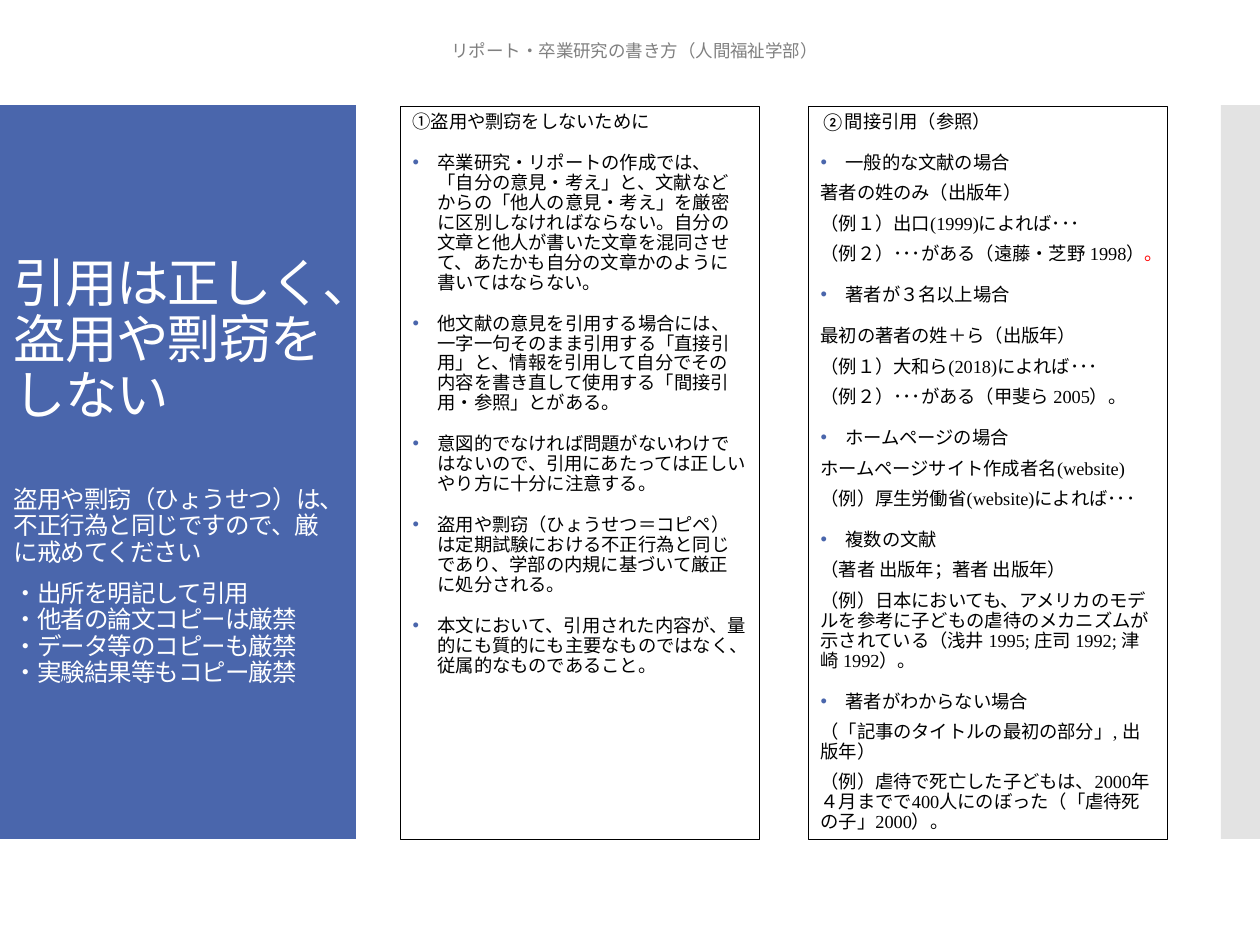
import pptx
import pptx.util
import pptx.dml.color
import pptx.enum.text
import pptx.enum.shapes
import pptx.oxml.ns
from lxml import etree

Pt = pptx.util.Pt
qn = pptx.oxml.ns.qn
Enum = pptx.enum.text

TITLE = [
    ("top", "引用は正しく、盗用や剽窃をしない"),
    ("lead", "盗用や剽窃（ひょうせつ）は、不正行為と同じですので、厳に戒めてください"),
    ("first", "・出所を明記して引用"),
    ("rest", "・他者の論文コピーは厳禁"),
    ("rest", "・データ等のコピーも厳禁"),
    ("rest", "・実験結果等もコピー厳禁"),
]
LEFT = [
    ("head", "①盗用や剽窃をしないために"),
    ("dot", "卒業研究・リポートの作成では、「自分の意見・考え」と、文献などからの「他人の意見・考え」を厳密に区別しなければならない。自分の文章と他人が書いた文章を混同させて、あたかも自分の文章かのように書いてはならない。"),
    ("dot", "他文献の意見を引用する場合には、一字一句そのまま引用する「直接引用」と、情報を引用して自分でその内容を書き直して使用する「間接引用・参照」とがある。"),
    ("dot", "意図的でなければ問題がないわけではないので、引用にあたっては正しいやり方に十分に注意する。"),
    ("dot", "盗用や剽窃（ひょうせつ＝コピペ）は定期試験における不正行為と同じであり、学部の内規に基づいて厳正に処分される。"),
    ("dot", "本文において、引用された内容が、量的にも質的にも主要なものではなく、従属的なものであること。"),
]
RIGHT = [
    ("head", "②間接引用（参照）"),
    ("dot", "一般的な文献の場合"),
    ("note", "著者の姓のみ（出版年）"),
    ("note", "（例１）出口(1999)によれば･･･"),
    ("deep", "（例２）･･･がある（遠藤・芝野 1998）", "。"),
    ("dot", "著者が３名以上場合"),
    ("head", "最初の著者の姓＋ら（出版年）"),
    ("note", "（例１）大和ら(2018)によれば･･･"),
    ("deep", "（例２）･･･がある（甲斐ら 2005）。"),
    ("dot", "ホームページの場合"),
    ("note", "ホームページサイト作成者名(website)"),
    ("mid", "（例）厚生労働省(website)によれば･･･"),
    ("dot", "複数の文献"),
    ("note", "（著者 出版年；著者 出版年）"),
    ("note", "（例）日本においても、アメリカのモデルを参考に子どもの虐待のメカニズムが示されている（浅井 1995; 庄司 1992; 津崎 1992）。"),
    ("dot", "著者がわからない場合"),
    ("note", "（「記事のタイトルの最初の部分」, 出版年）"),
    ("note", "（例）虐待で死亡した子どもは、2000年４月までで400人にのぼった（「虐待死の子」2000）。"),
]
HEADER = [("strap", "リポート・卒業研究の書き方（人間福祉学部）")]

THEME = {
    "blue": "4A66AC", "gray": "C8C8C8", "ink": "000000",
    "white": "FFFFFF", "dim": "808080", "red": "FF0000",
    "sans": ("Calibri", "Calibri"),
    "gothic": ("Noto Sans CJK JP", "Noto Sans CJK JP"),
    "serif": ("Times New Roman", "Calibri"),
}
BIG = {"size": 30, "lead": 32, "color": "white", "track": -60}
SMALL = {**BIG, "size": 14, "lead": 15.1}
BODY = {"size": 10.5, "lead": 11.4, "color": "ink", "before": 12}
STYLE = {
    "top": BIG,
    "lead": {**SMALL, "before": 35},
    "first": {**SMALL, "before": 8.5},
    "rest": SMALL,
    "head": BODY,
    "dot": {**BODY, "hang": 25, "bullet": True},
    "note": {**BODY, "before": 6},
    "mid": {**BODY, "before": 6, "hang": 49},
    "deep": {**BODY, "before": 6, "hang": 74},
    "strap": {"size": 10, "lead": 14, "color": "dim", "align": Enum.PP_ALIGN.CENTER},
}
SCALE = 914400 / 126


def px(n):
    return round(n * SCALE)


def rgb(name):
    return pptx.dml.color.RGBColor.from_string(THEME[name])


def sub(node, tag, **attrs):
    return etree.SubElement(node, qn(tag), attrs)


def put(obj, vals):
    for key, val in vals.items():
        setattr(obj, key, val)


def place(shape, box):
    put(shape, dict(zip(("left", "top", "width", "height"), map(px, box))))


def write(shape, rows, face, anchor):
    frame = shape.text_frame
    put(frame, {"word_wrap": True, "auto_size": Enum.MSO_AUTO_SIZE.NONE,
                "vertical_anchor": anchor})
    latin, asian = THEME[face]
    for i, (kind, *parts) in enumerate(rows):
        st = STYLE[kind]
        para = frame.paragraphs[0] if i == 0 else frame.add_paragraph()
        put(para, {"alignment": st.get("align", Enum.PP_ALIGN.LEFT),
                   "line_spacing": Pt(st["lead"]),
                   "space_before": Pt(st.get("before", 0)),
                   "space_after": Pt(0)})
        props = para._p.get_or_add_pPr()
        hang = px(st.get("hang", 0))
        props.set("marL", str(hang))
        props.set("indent", str(-hang))
        if st.get("bullet"):
            sub(sub(props, "a:buClr"), "a:srgbClr", val=THEME["blue"])
            sub(props, "a:buFont", typeface="Arial")
            sub(props, "a:buChar", char="•")
        else:
            sub(props, "a:buNone")
        for text, color in zip(parts, (st["color"], "red")):
            run = para.add_run()
            run.text = text
            put(run.font, {"size": Pt(st["size"]), "name": latin, "bold": False})
            run.font.color.rgb = rgb(color)
            mark = run._r.get_or_add_rPr()
            sub(mark, "a:ea", typeface=asian)
            if "track" in st:
                mark.set("spc", str(st["track"]))


def band(slide, box, color, order, alpha=None):
    kind = pptx.enum.shapes.MSO_SHAPE.RECTANGLE
    shape = slide.shapes.add_shape(kind, *map(px, box))
    shape.shadow.inherit = False
    shape.fill.solid()
    shape.fill.fore_color.rgb = rgb(color)
    shape.line.fill.background()
    if alpha:
        tint = shape._element.spPr.find(".//" + qn("a:srgbClr"))
        sub(tint, "a:alpha", val=str(alpha * 1000))
    slide.shapes._spTree.insert(2 + order, shape._element)


def main():
    deck = pptx.Presentation()
    put(deck, {"slide_width": px(1260), "slide_height": px(945)})
    slide = deck.slides.add_slide(deck.slide_layouts[3])
    title, *cols = slide.placeholders

    band(slide, (0, 105, 356, 734), "blue", 0)
    band(slide, (1221, 105, 39, 734), "gray", 1, 50)

    place(title, (1, 155, 335, 634))
    write(title, TITLE, "sans", Enum.MSO_ANCHOR.MIDDLE)

    for i, (col, rows, face) in enumerate(zip(cols, (LEFT, RIGHT), ("gothic", "serif"))):
        place(col, (400 + 408 * i, 106, 359, 733))
        col.line.color.rgb = rgb("ink")
        col.line.width = Pt(0.25)
        write(col, rows, face, Enum.MSO_ANCHOR.TOP)

    strap = slide.shapes.add_textbox(*map(px, (329, 24, 611, 50)))
    write(strap, HEADER, "sans", Enum.MSO_ANCHOR.MIDDLE)
    deck.save("out.pptx")


if __name__ == "__main__":
    main()
